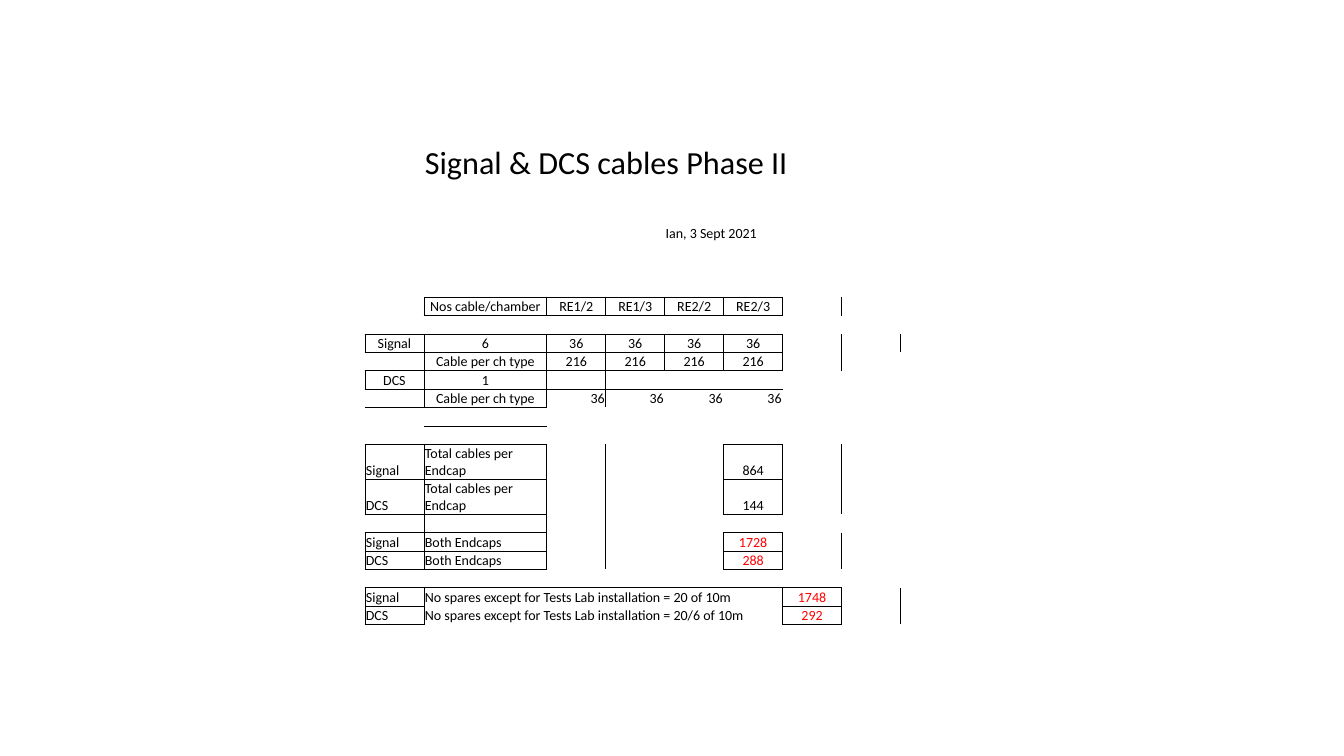
from collections import defaultdict

from lxml.etree import SubElement
from pptx import Presentation
from pptx.dml.color import RGBColor
from pptx.enum.text import MSO_ANCHOR as Anchor, PP_ALIGN as Align
from pptx.oxml.ns import qn
from pptx.util import Emu, Pt

PX = 914400 // 400  # 400 px to the inch
COLORS = {"ink": "000000", "total": "FF0000"}
FONT = "Calibri"
BODY_SIZE, TITLE_SIZE = 10, 23
PLAIN_STYLE = "{2D5ABB26-0587-4C30-8999-92F81FD0307C}"  # no style, no grid
# side: row step, column step, facing side
SIDES = {"L": (0, -1, "R"), "R": (0, 1, "L"), "T": (-1, 0, "B"), "B": (1, 0, "T")}


def px(length):
    return Emu(length * PX)


def write_text(cell, text, size=BODY_SIZE, color="ink", align=Align.LEFT):
    para = cell.text_frame.paragraphs[0]
    para.alignment = align
    span = para.add_run()
    span.text = text
    span.font.name = FONT
    span.font.size = Pt(size)
    span.font.color.rgb = RGBColor.from_string(COLORS[color])


class CableSheet:
    """A slide with one table whose cells are filled and boxed one by one."""

    def __init__(self, page, left, top, widths, heights):
        frame = page.shapes.add_table(len(heights), len(widths), px(left), px(top),
                                      px(sum(widths)), px(sum(heights)))
        self.table = frame.table
        self.table.first_row = self.table.horz_banding = False
        self.table._tbl.tblPr.find(qn("a:tableStyleId")).text = PLAIN_STYLE
        self.size = len(heights), len(widths)
        self.edges = defaultdict(set)
        for column, width in zip(self.table.columns, widths):
            column.width = px(width)
        for row, height in zip(self.table.rows, heights):
            row.height = px(height)

    def edge(self, row, col, side):
        down, right, facing = SIDES[side]
        self.edges[row, col].add(side)
        self.edges[row + down, col + right].add(facing)

    def box(self, row, col):
        for side in SIDES:
            self.edge(row, col, side)

    def text(self, row, col, text, across=1, boxed=False, **style):
        cell = self.table.cell(row, col)
        if across > 1:
            cell.merge(self.table.cell(row, col + across - 1))
        write_text(cell, text, **style)
        if boxed:
            self.box(row, col)

    def finish(self):
        """Set margins, borders and fill of every cell."""
        rows, cols = self.size
        for row in range(rows):
            for col in range(cols):
                cell = self.table.cell(row, col)
                cell.vertical_anchor = Anchor.BOTTOM
                cell.margin_left = cell.margin_right = cell.margin_top = px(4)
                cell.margin_bottom = 0
                para = cell.text_frame.paragraphs[0]
                if not para.runs:
                    SubElement(para._p, qn("a:endParaRPr"), sz=str(BODY_SIZE * 100))
                for side in SIDES:
                    if side in self.edges[row, col]:
                        self.draw_edge(cell, side)
                cell.fill.background()

    def draw_edge(self, cell, side):
        line = SubElement(cell._tc.get_or_add_tcPr(), qn(f"a:ln{side}"), w=str(Pt(0.5)))
        fill = SubElement(line, qn("a:solidFill"))
        SubElement(fill, qn("a:srgbClr"), val=COLORS["ink"])


def main():
    deck = Presentation()
    deck.slide_width, deck.slide_height = px(5333), px(3000)
    page = deck.slides.add_slide(deck.slide_layouts[6])
    heights = [165, 159] + [73] * 12 + [132] * 2 + [73] * 6
    sheet = CableSheet(page, 1448, 564, [234, 488] + [234] * 7, heights)

    # Heading
    sheet.text(0, 1, "Signal & DCS cables Phase II", across=6, size=TITLE_SIZE)
    sheet.text(2, 4, "Ian, 3 Sept 2021", across=2)

    # Cables per chamber
    chamber_rows = {
        6: ["", "Nos cable/chamber", "RE1/2", "RE1/3", "RE2/2", "RE2/3"],
        8: ["Signal", "6"] + ["36"] * 4,
        9: ["", "Cable per ch type"] + ["216"] * 4,
        10: ["DCS", "1"],
        11: ["", "Cable per ch type"],
    }
    for row, texts in chamber_rows.items():
        for col, text in enumerate(texts):
            if text:
                sheet.text(row, col, text, boxed=True, align=Align.CENTER)
    for col in range(2, 6):
        sheet.text(11, col, "36", align=Align.RIGHT)
    sheet.edge(8, 6, "R")

    # Totals per endcap and for both
    totals = [
        (14, "Signal", "Total cables per Endcap", "864", "ink"),
        (15, "DCS", "Total cables per Endcap", "144", "ink"),
        (17, "Signal", "Both Endcaps", "1728", "total"),
        (18, "DCS", "Both Endcaps", "288", "total"),
    ]
    for row, kind, label, total, color in totals:
        sheet.text(row, 0, kind, boxed=True)
        sheet.text(row, 1, label, boxed=True)
        sheet.text(row, 5, total, boxed=True, color=color, align=Align.CENTER)
    sheet.box(16, 1)

    # Totals with spares
    spares = [
        (20, "Signal", "No spares except for Tests Lab installation = 20 of 10m", "1748"),
        (21, "DCS", "No spares except for Tests Lab installation = 20/6 of 10m", "292"),
    ]
    for row, kind, note, total in spares:
        sheet.text(row, 0, kind, boxed=True)
        sheet.text(row, 1, note, across=5)
        sheet.edge(row, 1, "R")
        sheet.text(row, 6, total, boxed=True, color="total", align=Align.CENTER)

    sheet.finish()
    deck.save("out.pptx")


if __name__ == "__main__":
    main()
